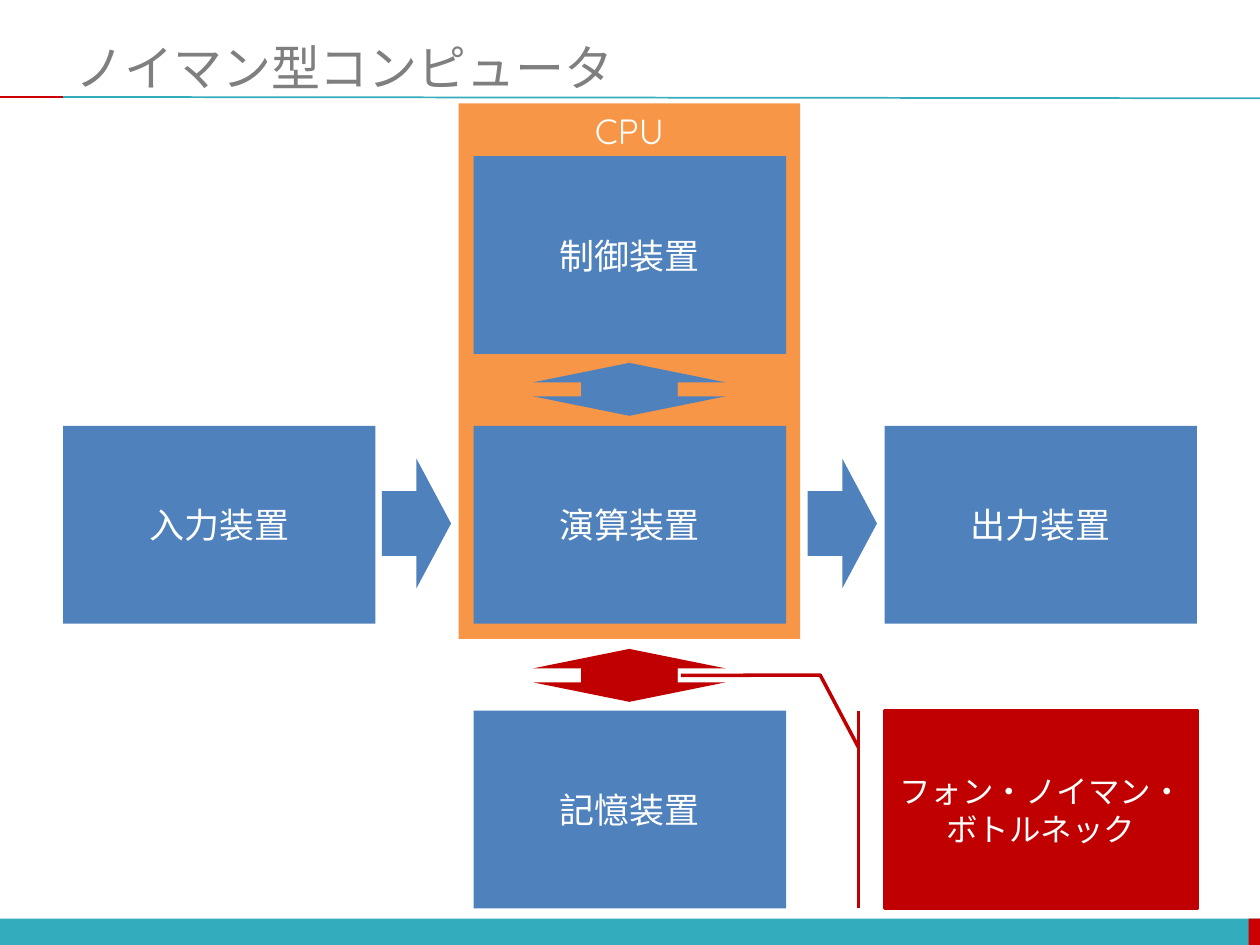
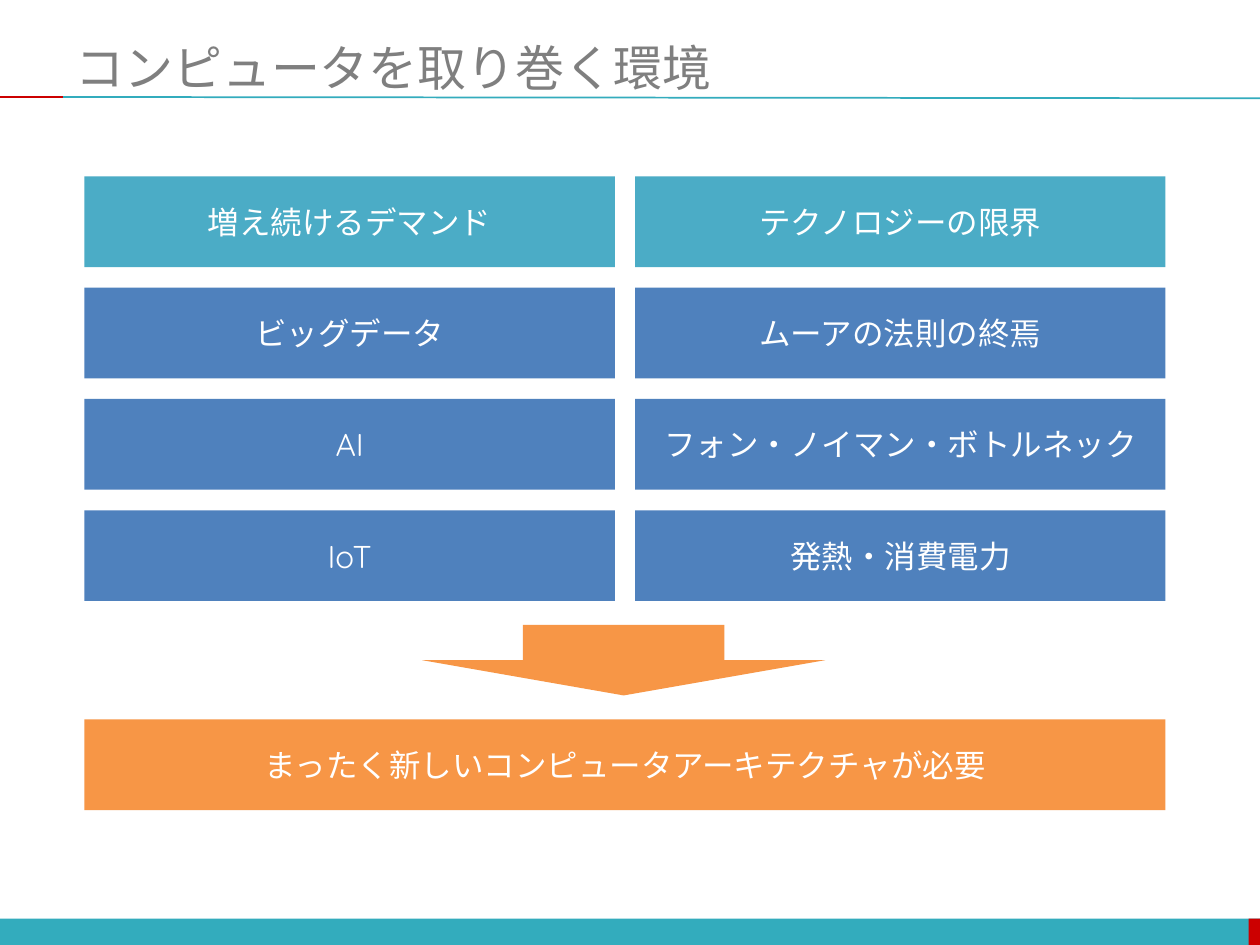
from dataclasses import dataclass

from lxml.etree import SubElement
from pptx import Presentation
from pptx.dml.color import RGBColor
from pptx.enum.shapes import MSO_CONNECTOR, MSO_SHAPE as Preset
from pptx.enum.text import MSO_ANCHOR as Anchor, PP_ALIGN as Align
from pptx.oxml.ns import qn
from pptx.presentation import Presentation as Deck
from pptx.shapes.autoshape import Shape
from pptx.slide import Slide
from pptx.text.text import TextFrame
from pptx.util import Inches, Pt

FONT = "Quicksand"
COLORS = {
    "teal": "33ACBD",
    "accent_red": "CC0000",
    "title_gray": "7F7F7F",
    "white": "FFFFFF",
    "blue": "4F81BD",
    "aqua": "4BACC6",
    "orange": "F79646",
    "bottleneck_red": "C00000",
}


@dataclass(frozen=True)
class Box:
    left: float
    top: float
    width: float
    height: float

    def lengths(self) -> tuple[Inches, Inches, Inches, Inches]:
        return Inches(self.left), Inches(self.top), Inches(self.width), Inches(self.height)


@dataclass(frozen=True)
class Rule:
    start: tuple[float, float]
    end: tuple[float, float]
    color: str


@dataclass(frozen=True)
class Band:
    box: Box
    color: str


@dataclass(frozen=True)
class Unit:
    """A device of the computer, placed by column and row."""
    label: str
    column: int
    row: int


TITLE_BOX = Box(0.5, 0.3, 9.5, 0.46)
FOOTER_BANDS = [
    Band(Box(0, 7.29, 10, 0.21), "teal"),
    Band(Box(9.91, 7.29, 0.09, 0.21), "accent_red"),
]
TITLE_RULES = [
    Rule((0.5, 0.77), (10, 0.78), "teal"),
    Rule((0, 0.77), (0.5, 0.77), "accent_red"),
]

BOTTLENECK = "フォン・ノイマン・ボトルネック"

UNIT_WIDTH, UNIT_HEIGHT = 2.48, 1.57
UNIT_LEFT, UNIT_PITCH = 0.5, 3.26
UNIT_TOPS = [1.24, 3.38, 5.64]
UNITS = [
    Unit("演算装置", 1, 1),
    Unit("制御装置", 1, 0),
    Unit("記憶装置", 1, 2),
    Unit("入力装置", 0, 1),
    Unit("出力装置", 2, 1),
]
CALLOUT_ADJUSTMENTS = [0.188, -0.083, -0.18, -0.206, -0.178, -0.652]

GRID_LEFT, GRID_TOP = 0.67, 1.4
CELL_WIDTH, CELL_HEIGHT = 4.21, 0.72
COLUMN_PITCH, ROW_PITCH = 4.37, 2.65 / 3
TRENDS = [
    ("増え続けるデマンド", "テクノロジーの限界"),
    ("ビッグデータ", "ムーアの法則の終焉"),
    ("AI", BOTTLENECK),
    ("IoT", "発熱・消費電力"),
]


def rgb(color: str) -> RGBColor:
    return RGBColor.from_string(COLORS[color])


def write(frame: TextFrame, text: str, size: float, color: str, align: Align,
          anchor: Anchor) -> None:
    frame.word_wrap = True
    frame.vertical_anchor = anchor
    paragraph = frame.paragraphs[0]
    paragraph.alignment = align
    run = paragraph.add_run()
    run.text = text
    run.font.size = Pt(size)
    run.font.color.rgb = rgb(color)
    run.font.name = FONT
    SubElement(run.font._element, qn("a:ea"), typeface=FONT)


def add_block(slide: Slide, box: Box, fill: str, label: str = "", size: float = 18,
              preset: Preset = Preset.RECTANGLE, anchor: Anchor = Anchor.MIDDLE) -> Shape:
    block = slide.shapes.add_shape(preset, *box.lengths())
    block.shadow.inherit = False
    block.fill.solid()
    block.fill.fore_color.rgb = rgb(fill)
    block.line.fill.background()
    if label:
        write(block.text_frame, label, size, "white", Align.CENTER, anchor)
    return block


def add_rule(slide: Slide, rule: Rule) -> None:
    ends = [Inches(value) for value in (*rule.start, *rule.end)]
    line = slide.shapes.add_connector(MSO_CONNECTOR.STRAIGHT, *ends)
    line.line.color.rgb = rgb(rule.color)
    line.line.width = Pt(1)
    SubElement(line._element.spPr, qn("a:effectLst"))


def add_titled_slide(deck: Deck, title: str) -> Slide:
    """Add a blank slide with the shared footer, title rules and title."""
    slide = deck.slides.add_slide(deck.slide_layouts[6])
    for band in FOOTER_BANDS:
        add_block(slide, band.box, band.color)
    for rule in TITLE_RULES:
        add_rule(slide, rule)
    heading = slide.shapes.add_textbox(*TITLE_BOX.lengths())
    write(heading.text_frame, title, 28, "title_gray", Align.LEFT, Anchor.MIDDLE)
    return slide


def unit_box(column: int, row: int) -> Box:
    return Box(UNIT_LEFT + column * UNIT_PITCH, UNIT_TOPS[row], UNIT_WIDTH, UNIT_HEIGHT)


def add_exchange(slide: Slide, top: float, color: str) -> None:
    """Overlap an up arrow and a turned one to show two-way traffic."""
    for offset, rotation in ((0, 0), (0.11, 180)):
        arrow = add_block(slide, Box(4.23, top + offset, 1.53, 0.31), color,
                          preset=Preset.UP_ARROW)
        arrow.rotation = rotation


def build_von_neumann(deck: Deck) -> None:
    slide = add_titled_slide(deck, "ノイマン型コンピュータ")
    add_block(slide, Box(3.64, 0.82, 2.71, 4.25), "orange", "CPU", 20, anchor=Anchor.TOP)
    for unit in UNITS:
        add_block(slide, unit_box(unit.column, unit.row), "blue", unit.label, 20)
    for left in (3.03, 6.41):
        add_block(slide, Box(left, 3.64, 0.55, 1.03), "blue", preset=Preset.RIGHT_ARROW)
    add_exchange(slide, 2.88, "blue")
    add_exchange(slide, 5.15, "bottleneck_red")

    bottleneck = add_block(slide, unit_box(2, 2), "bottleneck_red", BOTTLENECK,
                           preset=Preset.LINE_CALLOUT_2_BORDER_AND_ACCENT_BAR)
    bottleneck.line.color.rgb = rgb("bottleneck_red")
    bottleneck.line.width = Pt(2)
    for index, value in enumerate(CALLOUT_ADJUSTMENTS):
        bottleneck.adjustments[index] = value


def build_environment(deck: Deck) -> None:
    slide = add_titled_slide(deck, "コンピュータを取り巻く環境")
    for row, labels in enumerate(TRENDS):
        for column, label in enumerate(labels):
            cell = Box(GRID_LEFT + column * COLUMN_PITCH, GRID_TOP + row * ROW_PITCH,
                       CELL_WIDTH, CELL_HEIGHT)
            add_block(slide, cell, "blue" if row else "aqua", label)
    add_block(slide, Box(3.35, 4.96, 3.2, 0.56), "orange", preset=Preset.DOWN_ARROW)
    add_block(slide, Box(GRID_LEFT, 5.71, COLUMN_PITCH + CELL_WIDTH, CELL_HEIGHT), "orange",
              "まったく新しいコンピュータアーキテクチャが必要")


def main() -> None:
    deck = Presentation()
    deck.slide_width, deck.slide_height = Inches(10), Inches(7.5)
    build_von_neumann(deck)
    build_environment(deck)
    deck.save("out.pptx")


if __name__ == "__main__":
    main()
